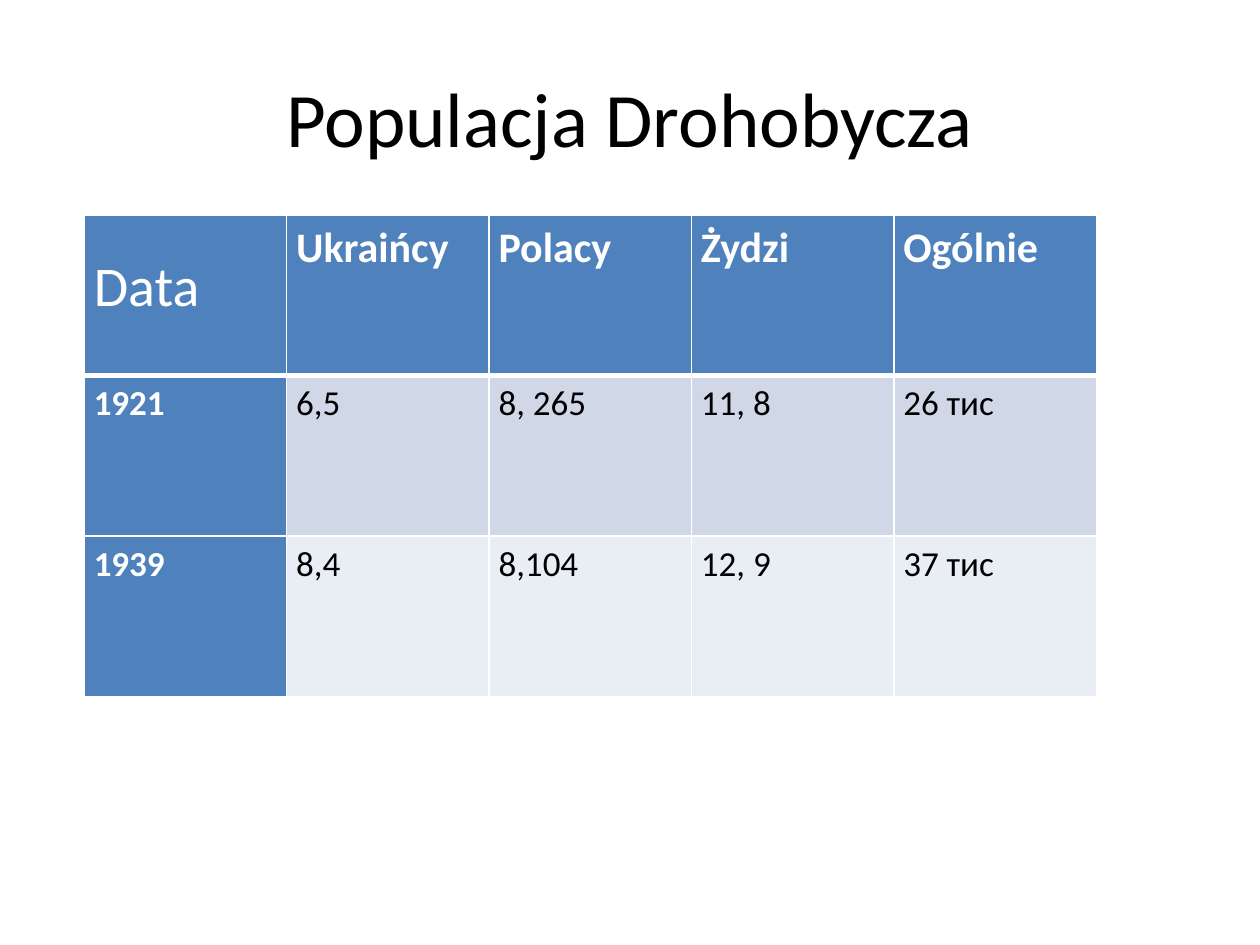
import pptx
import pptx.dml.color
import pptx.enum.text
import pptx.oxml
import pptx.util
from lxml import etree

Cm = pptx.util.Cm
Pt = pptx.util.Pt
ALIGN = pptx.enum.text.PP_ALIGN
ANCHOR = pptx.enum.text.MSO_ANCHOR

TITLE = "Populacja Drohobycza"
ROWS = [
    ["Data", "Ukraińcy", "Polacy", "Żydzi", "Ogólnie"],
    ["1921", "6,5", "8, 265", "11, 8", "26 тис"],
    ["1939", "8,4", "8,104", "12, 9", "37 тис"],
]
HEADER_FILL, BAND_FILLS = "4F81BD", ["E9EDF4", "D0D8E8"]
WHITE, BLACK = "FFFFFF", "000000"
COLUMN_WIDTH, ROW_HEIGHT = Cm(4.08), Cm(3.24)


def color(value):
    return pptx.dml.color.RGBColor.from_string(value)


def write(frame, text, size=20, bold=False, ink=BLACK, align=ALIGN.LEFT, spacing=1.15):
    para = frame.paragraphs[0]
    para.alignment = align
    para.line_spacing = spacing
    span = para.add_run()
    span.text = text
    span.font.name = "Calibri"
    span.font.size = Pt(size)
    span.font.bold = bold
    span.font.color.rgb = color(ink)


def draw_borders(cell, top, bottom):
    properties = cell._tc.get_or_add_tcPr()
    for side, width in (("L", 1), ("R", 1), ("T", top), ("B", bottom)):
        line = etree.SubElement(properties, pptx.oxml.ns.qn(f"a:ln{side}"), w=str(Pt(width)))
        fill = etree.SubElement(line, pptx.oxml.ns.qn("a:solidFill"))
        etree.SubElement(fill, pptx.oxml.ns.qn("a:srgbClr"), val=WHITE)


def add_population_table(page):
    row_count, column_count = len(ROWS), len(ROWS[0])
    table = page.shapes.add_table(
        row_count, column_count, Cm(1.7), Cm(4.33),
        COLUMN_WIDTH * column_count, ROW_HEIGHT * row_count).table
    table.first_col = True
    for column in table.columns:
        column.width = COLUMN_WIDTH
    for row_index, values in enumerate(ROWS):
        table.rows[row_index].height = ROW_HEIGHT
        for column_index, value in enumerate(values):
            cell = table.cell(row_index, column_index)
            cell.margin_left = cell.margin_right = Cm(0.19)
            cell.margin_top = cell.margin_bottom = 0
            is_header = row_index == 0
            is_heading = is_header or column_index == 0
            draw_borders(cell, top=3 if row_index == 1 else 1, bottom=3 if is_header else 1)
            cell.fill.solid()
            cell.fill.fore_color.rgb = color(HEADER_FILL if is_heading else BAND_FILLS[row_index % 2])
            if is_header and column_index == 0:
                cell.vertical_anchor = ANCHOR.MIDDLE
                cell.margin_bottom = Cm(0.3)
                write(cell.text_frame, value, size=32, ink=WHITE, spacing=1.0)
            else:
                write(cell.text_frame, value, size=24 if is_header else 20,
                      bold=is_heading, ink=WHITE if is_heading else BLACK)


def main():
    """Build the slide with the population table of Drohobych."""
    deck = pptx.Presentation()
    deck.slide_width, deck.slide_height = Cm(25.4), Cm(19.05)
    page = deck.slides.add_slide(deck.slide_layouts[5])
    title = page.shapes.title
    title.left, title.top, title.width, title.height = Cm(1.27), Cm(0.76), Cm(22.86), Cm(3.18)
    title.text_frame.vertical_anchor = ANCHOR.MIDDLE
    write(title.text_frame, TITLE, size=44, align=ALIGN.CENTER, spacing=1.0)
    add_population_table(page)
    deck.save("out.pptx")


if __name__ == "__main__":
    main()
